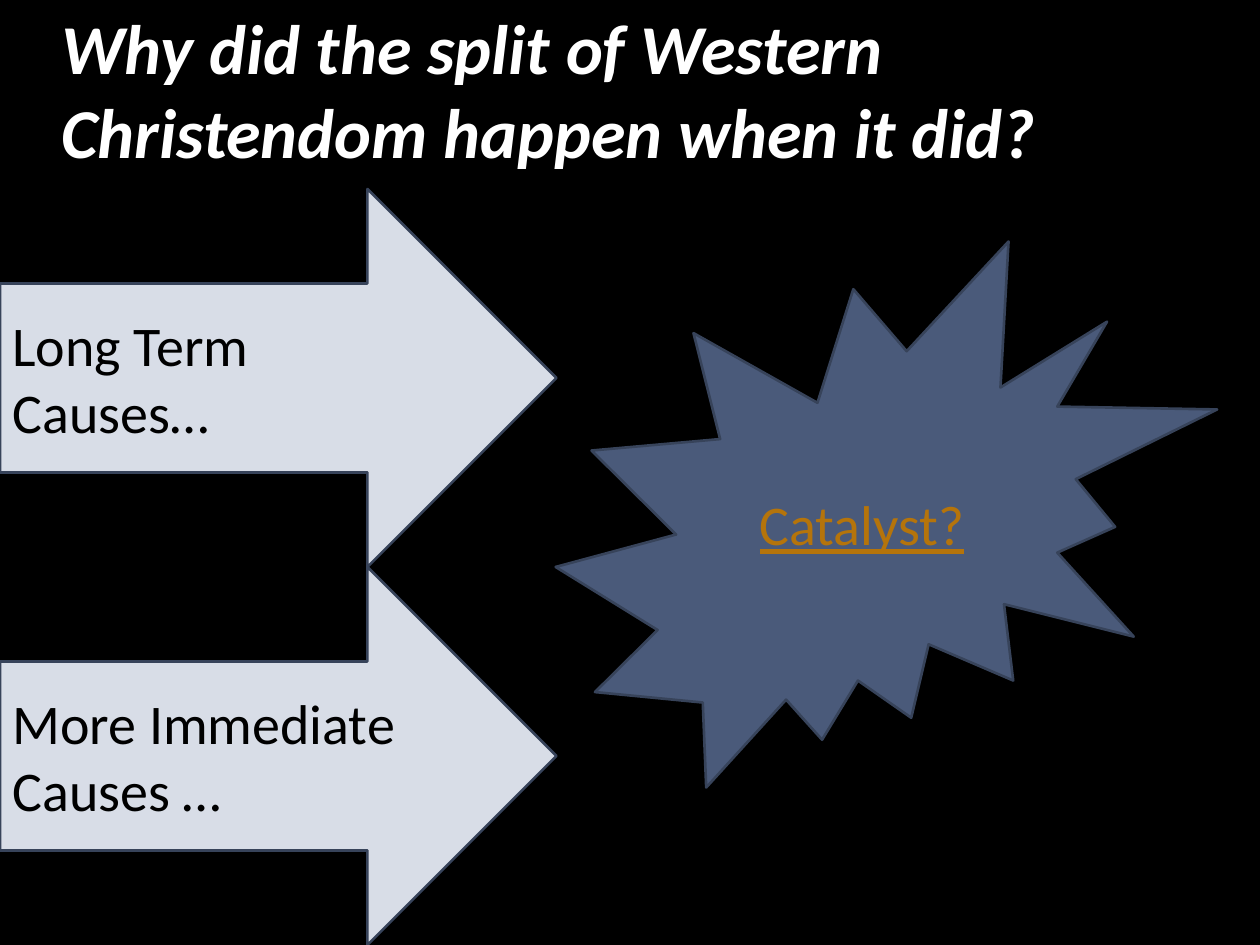
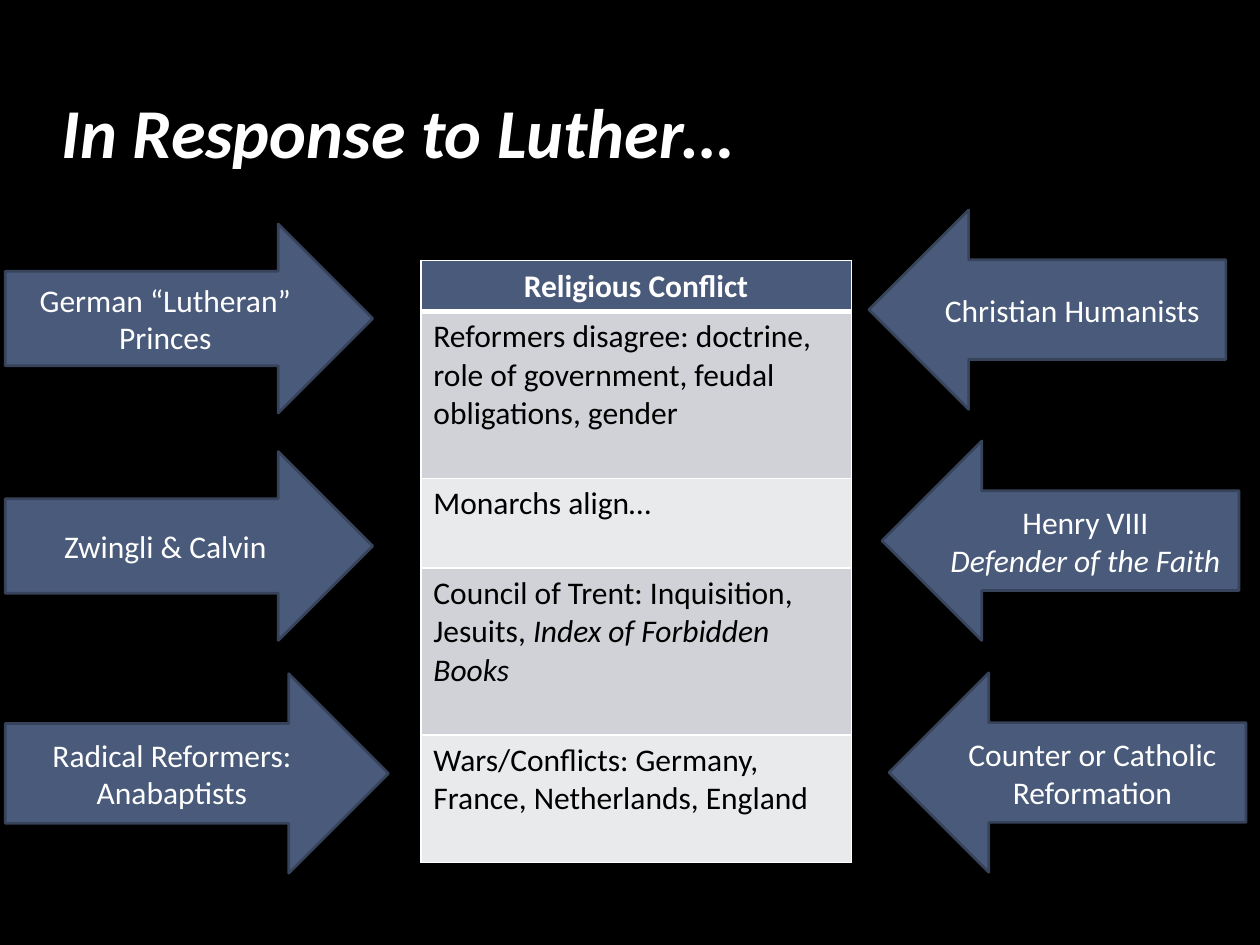
from dataclasses import dataclass

import lxml.etree
import pptx
import pptx.dml.color
import pptx.enum.shapes
import pptx.enum.text
import pptx.oxml.ns
import pptx.util

Pt = pptx.util.Pt
MSO = pptx.enum.shapes.MSO_SHAPE
ALIGN = pptx.enum.text.PP_ALIGN
ANCHOR = pptx.enum.text.MSO_ANCHOR

FONT = "Calibri"
BLACK, WHITE = "000000", "FFFFFF"
SLATE, SLATE_DARK, SLATE_PALE = "4A5A7A", "37435A", "D8DDE7"
AMBER = "B5740B"
ROW_FILLS = ("D0D2D7", "E9EAEC")


@dataclass(frozen=True)
class Run:
    text: str
    italic: bool = False
    bold: bool = False
    underline: bool = False


@dataclass(frozen=True)
class TextStyle:
    size: float
    color: str
    align: ALIGN = ALIGN.LEFT


@dataclass(frozen=True)
class Block:
    """A filled shape; each entry of paragraphs is a tuple of runs."""
    kind: MSO
    left: float
    top: float
    width: float
    height: float
    paragraphs: tuple[tuple[Run, ...], ...]
    fill: str
    style: TextStyle


TITLE = TextStyle(40, WHITE)
CAUSE = TextStyle(32, BLACK)
CATALYST = TextStyle(32, AMBER, ALIGN.CENTER)
LABEL = TextStyle(18, WHITE, ALIGN.CENTER)
CELL = TextStyle(18, BLACK)


def rgb(color: str) -> pptx.dml.color.RGBColor:
    return pptx.dml.color.RGBColor.from_string(color)


def write(tf, paragraphs: tuple[tuple[Run, ...], ...], style: TextStyle) -> None:
    tf.word_wrap = True
    for i, runs in enumerate(paragraphs):
        p = tf.add_paragraph() if i else tf.paragraphs[0]
        p.alignment = style.align
        for run in runs:
            r = p.add_run()
            r.text = run.text
            r.font.name = FONT
            r.font.size = Pt(style.size)
            r.font.color.rgb = rgb(style.color)
            r.font.bold = run.bold
            r.font.italic = run.italic
            r.font.underline = run.underline


def add_slide(prs, title: str):
    s = prs.slides.add_slide(prs.slide_layouts[6])
    s.background.fill.solid()
    s.background.fill.fore_color.rgb = rgb(BLACK)
    sp = s.shapes.add_textbox(Pt(28), Pt(18), Pt(605), Pt(84))
    sp.text_frame.vertical_anchor = ANCHOR.BOTTOM
    write(sp.text_frame, ((Run(title, italic=True, bold=True),),), TITLE)
    return s


def add_block(s, block: Block) -> None:
    sp = s.shapes.add_shape(block.kind, Pt(block.left), Pt(block.top),
                            Pt(block.width), Pt(block.height))
    sp.shadow.inherit = False
    sp.fill.solid()
    sp.fill.fore_color.rgb = rgb(block.fill)
    sp.line.color.rgb = rgb(SLATE_DARK)
    sp.line.width = Pt(1.5)
    sp.text_frame.vertical_anchor = ANCHOR.MIDDLE
    write(sp.text_frame, block.paragraphs, block.style)


def set_borders(cell, widths: dict[str, float]) -> None:
    """Draw white borders; widths maps the sides L, R, T, B, in that order, to points."""
    tc_pr = cell._tc.get_or_add_tcPr()
    qn = pptx.oxml.ns.qn
    for side, width in widths.items():
        ln = lxml.etree.SubElement(tc_pr, qn(f"a:ln{side}"), w=str(int(Pt(width))))
        fill = lxml.etree.SubElement(ln, qn("a:solidFill"))
        lxml.etree.SubElement(fill, qn("a:srgbClr"), val=WHITE)


def add_conflict_table(s) -> None:
    rows = (
        (29, (Run("Religious Conflict", bold=True),)),
        (95.5, (Run("Reformers disagree: doctrine, role of government, "
                    "feudal obligations, gender"),)),
        (51, (Run("Monarchs align…"),)),
        (95.5, (Run("Council of Trent: Inquisition, Jesuits, "),
                Run("Index of Forbidden Books", italic=True))),
        (73, (Run("Wars/Conflicts: Germany, France, Netherlands, England"),)),
    )
    total = sum(height for height, _ in rows)
    table = s.shapes.add_table(len(rows), 1, Pt(240.5), Pt(149),
                               Pt(246), Pt(total)).table
    for i, (height, runs) in enumerate(rows):
        table.rows[i].height = Pt(height)
        cell = table.cell(i, 0)
        set_borders(cell, {"L": 1, "R": 1, "T": 3 if i == 1 else 1,
                           "B": 3 if i == 0 else 1})
        cell.fill.solid()
        cell.fill.fore_color.rgb = rgb(ROW_FILLS[(i - 1) % 2] if i else SLATE)
        write(cell.text_frame, (runs,), CELL if i else LABEL)


def build_causes(prs) -> None:
    s = add_slide(prs, "Why did the split of Western Christendom happen when it did?")
    arrow_height = 216
    for i, text in enumerate(("Long Term Causes…", "More Immediate Causes …")):
        add_block(s, Block(MSO.RIGHT_ARROW, 0, 108 + i * arrow_height, 318, arrow_height,
                           ((Run(text),),), SLATE_PALE, CAUSE))
    add_block(s, Block(MSO.EXPLOSION2, 317.5, 138, 378, 312,
                       ((Run("Catalyst?", underline=True),),), SLATE, CATALYST))


def build_responses(prs) -> None:
    s = add_slide(prs, "In Response to Luther…")
    right, left = MSO.RIGHT_ARROW, MSO.LEFT_ARROW
    arrows = (
        (right, 3, 128, 210, 108, ((Run("German “Lutheran” Princes"),),)),
        (right, 3, 258, 210, 108, ((Run("Zwingli & Calvin"),),)),
        (right, 3, 385, 219, 114, ((Run("Radical Reformers: Anabaptists"),),)),
        (left, 496.5, 120, 204, 114, ((Run("Christian Humanists"),),)),
        (left, 504, 252, 204, 114, ((Run("Henry VIII"),),
                                    (Run("Defender of the Faith", italic=True),))),
        (left, 508, 384.5, 204, 114, ((Run("Counter or Catholic Reformation"),),)),
    )
    for arrow in arrows:
        add_block(s, Block(*arrow, SLATE, LABEL))
    add_conflict_table(s)


def main() -> None:
    prs = pptx.Presentation()
    prs.slide_width, prs.slide_height = Pt(720), Pt(540)
    build_causes(prs)
    build_responses(prs)
    prs.save("out.pptx")


if __name__ == "__main__":
    main()
